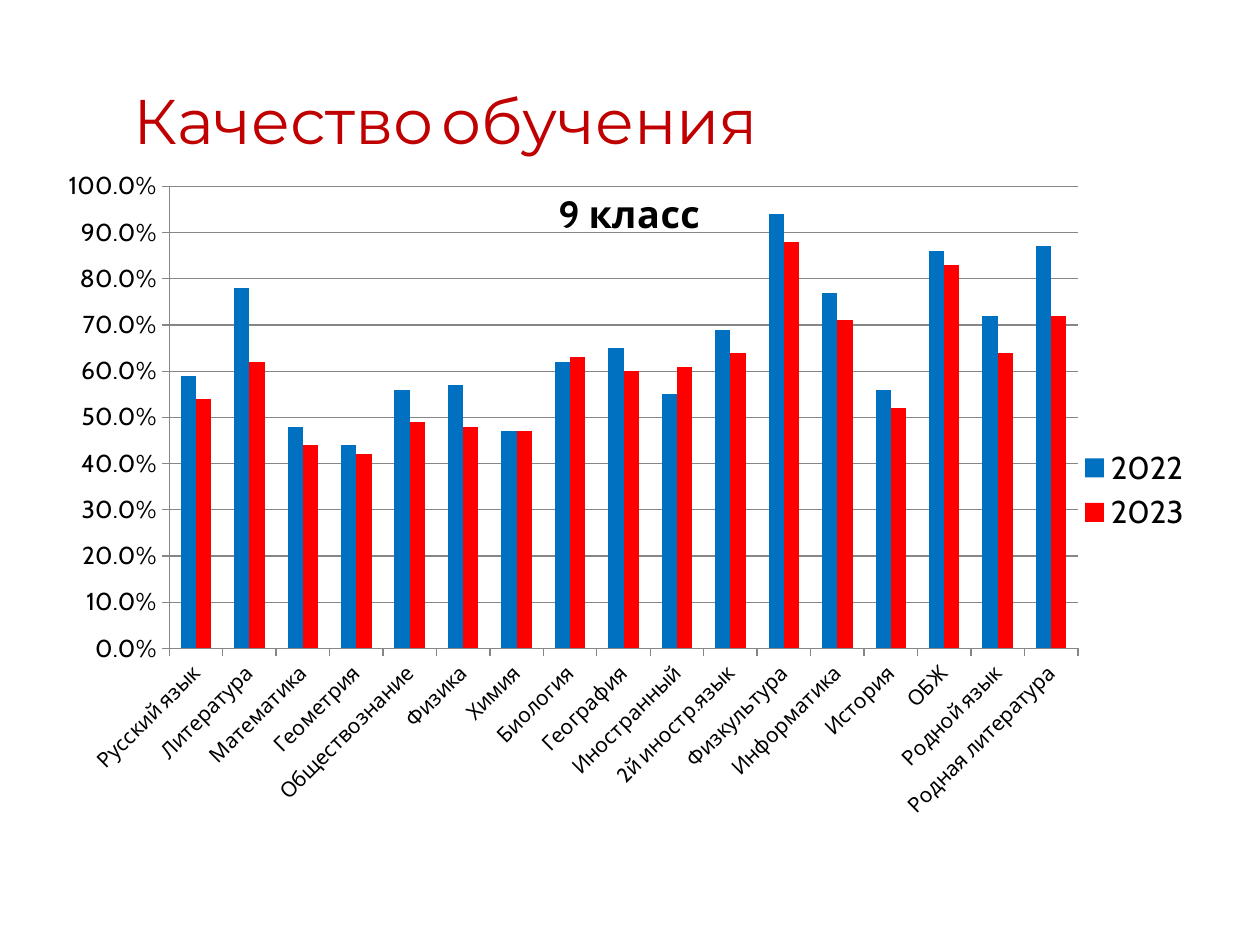
"""Build a slide comparing ninth-grade results by subject for two years."""
import pptx
import pptx.chart.data
import pptx.dml.color
import pptx.enum.chart
import pptx.enum.text
import pptx.oxml
import pptx.oxml.ns
import pptx.util

Inches = pptx.util.Inches
COLORS = {"heading": "C00000", "text": "000000", "grid": "868686",
          "2022": "0070C0", "2023": "FF0000"}
RESULTS = [
    ("Русский язык", 0.59, 0.54),
    ("Литература", 0.78, 0.62),
    ("Математика", 0.48, 0.44),
    ("Геометрия", 0.44, 0.42),
    ("Обществознание", 0.56, 0.49),
    ("Физика", 0.57, 0.48),
    ("Химия", 0.47, 0.47),
    ("Биология", 0.62, 0.63),
    ("География", 0.65, 0.6),
    ("Иностранный", 0.55, 0.61),
    ("2й иностр.язык", 0.69, 0.64),
    ("Физкультура", 0.94, 0.88),
    ("Информатика", 0.77, 0.71),
    ("История", 0.56, 0.52),
    ("ОБЖ", 0.86, 0.83),
    ("Родной язык", 0.72, 0.64),
    ("Родная литература", 0.87, 0.72),
]
PLOT_AREA = {"x": 0.1, "y": 0.04, "w": 0.79, "h": 0.7}


def rgb(name):
    return pptx.dml.color.RGBColor.from_string(COLORS[name])


def style_font(font, size, color="text", face="Cabin", bold=False):
    font.size = pptx.util.Pt(size)
    font.name = face
    font.bold = bold
    font.color.rgb = rgb(color)


def add_run(paragraph, text, **style):
    run = paragraph.add_run()
    run.text = text
    style_font(run.font, **style)


def add_heading(slide):
    heading = slide.shapes.add_textbox(Inches(0.43), Inches(0.6), Inches(6.22), Inches(0.71))
    frame = heading.text_frame
    frame.word_wrap = True
    frame.auto_size = pptx.enum.text.MSO_AUTO_SIZE.SHAPE_TO_FIT_TEXT
    line = frame.paragraphs[0]
    line.alignment = pptx.enum.text.PP_ALIGN.CENTER
    for text, size in (("Качество", 36), (" ", 18), ("обучения", 36)):
        add_run(line, text, size=size, color="heading", face="Montserrat")


def style_line(line):
    line.color.rgb = rgb("grid")
    line.width = pptx.util.Pt(0.75)


def style_axis(axis, size):
    axis.major_tick_mark = pptx.enum.chart.XL_TICK_MARK.OUTSIDE
    style_font(axis.tick_labels.font, size)
    style_line(axis.format.line)


def fix_plot_area(chart):
    plot_area = chart.element.xpath("c:chart/c:plotArea")[0]
    for old_layout in plot_area.xpath("c:layout"):
        plot_area.remove(old_layout)
    modes = "".join(f'<c:{side}Mode val="edge"/>' for side in "xy")
    sizes = "".join(f'<c:{side} val="{share}"/>' for side, share in PLOT_AREA.items())
    plot_area.insert(0, pptx.oxml.parse_xml(
        f'<c:layout {pptx.oxml.ns.nsdecls("c")}><c:manualLayout>'
        f'<c:layoutTarget val="inner"/>{modes}{sizes}</c:manualLayout></c:layout>'))


def add_results_chart(slide):
    subjects, *yearly_results = zip(*RESULTS)
    results = pptx.chart.data.CategoryChartData(number_format="0.0%")
    results.categories = subjects
    for year, shares in zip(("2022", "2023"), yearly_results):
        results.add_series(year, shares)
    chart = slide.shapes.add_chart(
        pptx.enum.chart.XL_CHART_TYPE.COLUMN_CLUSTERED,
        Inches(0.43), Inches(1.27), Inches(9.13), Inches(5.24), results).chart
    style_font(chart.font, 18)

    chart.has_title = True
    add_run(chart.chart_title.text_frame.paragraphs[0], "9 класс", size=21.6, bold=True)
    chart.element.xpath("c:chart/c:title/c:overlay")[0].set("val", "1")

    chart.has_legend = True
    chart.legend.position = pptx.enum.chart.XL_LEGEND_POSITION.RIGHT
    chart.legend.include_in_layout = False
    style_font(chart.legend.font, 18)

    columns = chart.plots[0]
    columns.gap_width = 150
    columns.overlap = 0
    columns.vary_by_categories = False
    for year in columns.series:
        year.format.fill.solid()
        year.format.fill.fore_color.rgb = rgb(year.name)

    style_axis(chart.category_axis, 12)
    chart.element.xpath(".//c:catAx/c:txPr/a:bodyPr")[0].set("rot", "-2700000")
    share_axis = chart.value_axis
    style_axis(share_axis, 14)
    share_axis.minimum_scale = 0
    share_axis.maximum_scale = 1
    share_axis.major_unit = 0.1
    share_axis.tick_labels.number_format = "0.0%"
    share_axis.tick_labels.number_format_is_linked = False
    share_axis.has_major_gridlines = True
    style_line(share_axis.major_gridlines.format.line)
    fix_plot_area(chart)


def main():
    deck = pptx.Presentation()
    deck.slide_width = Inches(10)
    deck.slide_height = Inches(7.5)
    slide = deck.slides.add_slide(deck.slide_layouts[6])
    add_heading(slide)
    add_results_chart(slide)
    deck.save("out.pptx")


if __name__ == "__main__":
    main()
